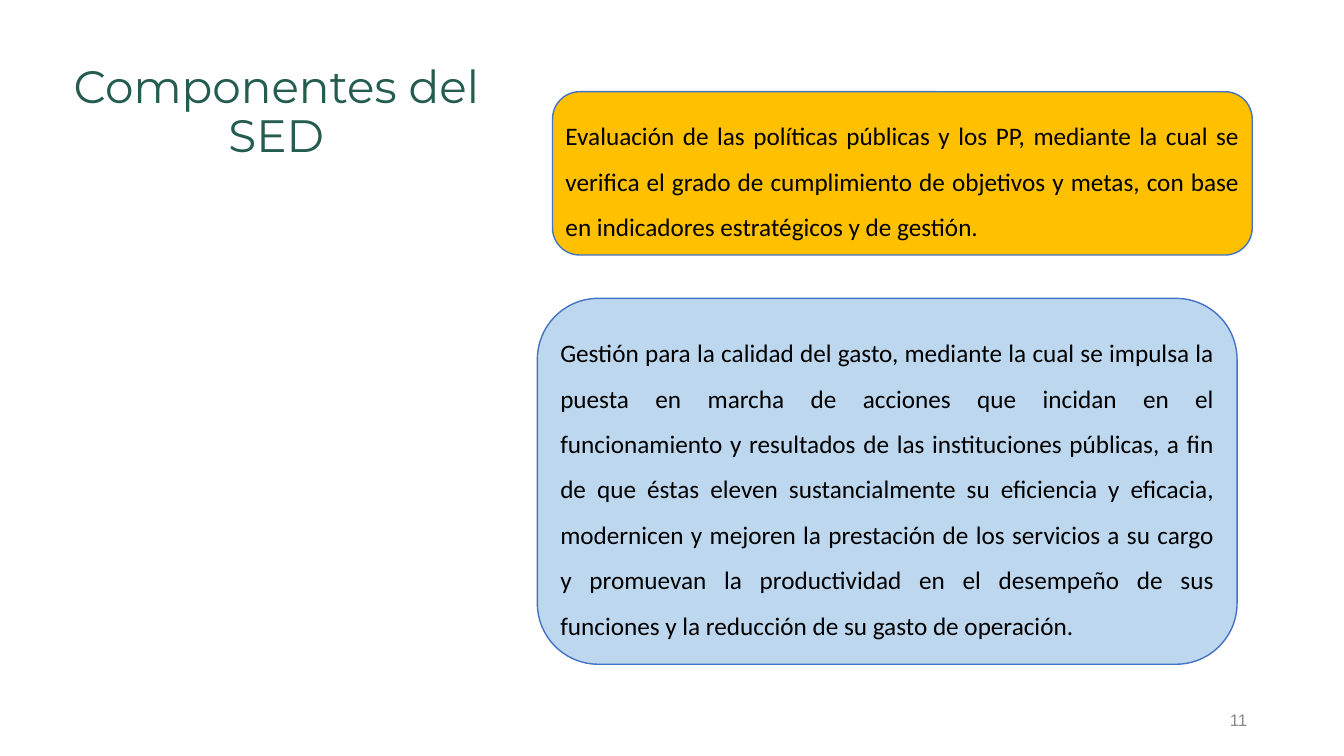
import pptx
import pptx.dml.color
import pptx.enum.shapes
import pptx.enum.text
import pptx.util

ALIGN = pptx.enum.text.PP_ALIGN
ANCHOR = pptx.enum.text.MSO_ANCHOR
FIT = pptx.enum.text.MSO_AUTO_SIZE

COLORS = {
    "title": "245C4F",
    "number": "888888",
    "body": "000000",
    "outline": "4472C4",
    "evaluation": "FFC000",
    "spending": "BDD7EE",
}
SLIDE_WIDTH = pptx.util.Inches(13.33)
SLIDE_HEIGHT = pptx.util.Inches(7.5)
INSET = pptx.util.Inches(0.05)

EVALUATION = (
    "Evaluación de las políticas públicas y los PP, mediante la cual se verifica "
    "el grado de cumplimiento de objetivos y metas, con base en indicadores "
    "estratégicos y de gestión."
)
SPENDING = (
    "Gestión para la calidad del gasto, mediante la cual se impulsa la puesta en "
    "marcha de acciones que incidan en el funcionamiento y resultados de las "
    "instituciones públicas, a fin de que éstas eleven sustancialmente su "
    "eficiencia y eficacia, modernicen y mejoren la prestación de los servicios a "
    "su cargo y promuevan la productividad en el desempeño de sus funciones y la "
    "reducción de su gasto de operación."
)


def rgb(name):
    return pptx.dml.color.RGBColor.from_string(COLORS[name])


def area(left, top, width, height):
    """Turn percentages of the slide's size into lengths."""
    return (
        int(SLIDE_WIDTH * left / 100),
        int(SLIDE_HEIGHT * top / 100),
        int(SLIDE_WIDTH * width / 100),
        int(SLIDE_HEIGHT * height / 100),
    )


def set_attributes(target, values):
    for name, value in values.items():
        setattr(target, name, value)


def write(shape, text, color, frame, paragraph, font):
    """Fill a shape with one paragraph, using dicts of format values."""
    text_frame = shape.text_frame
    text_frame.text = text
    margins = {f"margin_{side}": INSET for side in ("left", "top", "right", "bottom")}
    set_attributes(text_frame, margins | frame)
    first_paragraph = text_frame.paragraphs[0]
    set_attributes(first_paragraph, paragraph)
    run_font = first_paragraph.runs[0].font
    set_attributes(run_font, font)
    run_font.color.rgb = rgb(color)


def place_title(slide, box):
    title = slide.shapes.title
    set_attributes(title, dict(zip(("left", "top", "width", "height"), box)))
    write(
        title, "Componentes del SED", "title",
        {"vertical_anchor": ANCHOR.TOP, "word_wrap": True, "auto_size": FIT.NONE},
        {"alignment": ALIGN.CENTER, "line_spacing": 0.9},
        {"name": "Montserrat", "size": pptx.util.Pt(32.4)},
    )


def add_component(slide, box, text, fill):
    rounded = pptx.enum.shapes.MSO_SHAPE.ROUNDED_RECTANGLE
    shape = slide.shapes.add_shape(rounded, *box)
    shape.shadow.inherit = False
    shape.fill.solid()
    shape.fill.fore_color.rgb = rgb(fill)
    shape.line.color.rgb = rgb("outline")
    shape.line.width = pptx.util.Pt(1)
    write(
        shape, text, "body",
        {"vertical_anchor": ANCHOR.MIDDLE, "word_wrap": True,
         "auto_size": FIT.SHAPE_TO_FIT_TEXT},
        {"alignment": ALIGN.JUSTIFY, "line_spacing": 1.5},
        {"name": "Calibri", "size": pptx.util.Pt(18)},
    )


def add_page_number(slide, box, number):
    write(
        slide.shapes.add_textbox(*box), number, "number",
        {"vertical_anchor": ANCHOR.MIDDLE, "word_wrap": False,
         "auto_size": FIT.SHAPE_TO_FIT_TEXT},
        {"alignment": ALIGN.RIGHT},
        {"name": "Arial", "size": pptx.util.Pt(12)},
    )


def main():
    presentation = pptx.Presentation()
    set_attributes(
        presentation, {"slide_width": SLIDE_WIDTH, "slide_height": SLIDE_HEIGHT}
    )
    title_only = presentation.slide_layouts.get_by_name("Title Only")
    slide = presentation.slides.add_slide(title_only)
    place_title(slide, area(3.68, 7.87, 33.76, 15.07))
    add_page_number(slide, area(91, 93.33, 2.18, 3.87), "11")
    add_component(slide, area(41.11, 12.13, 52.06, 21.6), EVALUATION, "evaluation")
    add_component(slide, area(39.98, 39.47, 52.06, 48.4), SPENDING, "spending")
    presentation.save("out.pptx")


if __name__ == "__main__":
    main()
